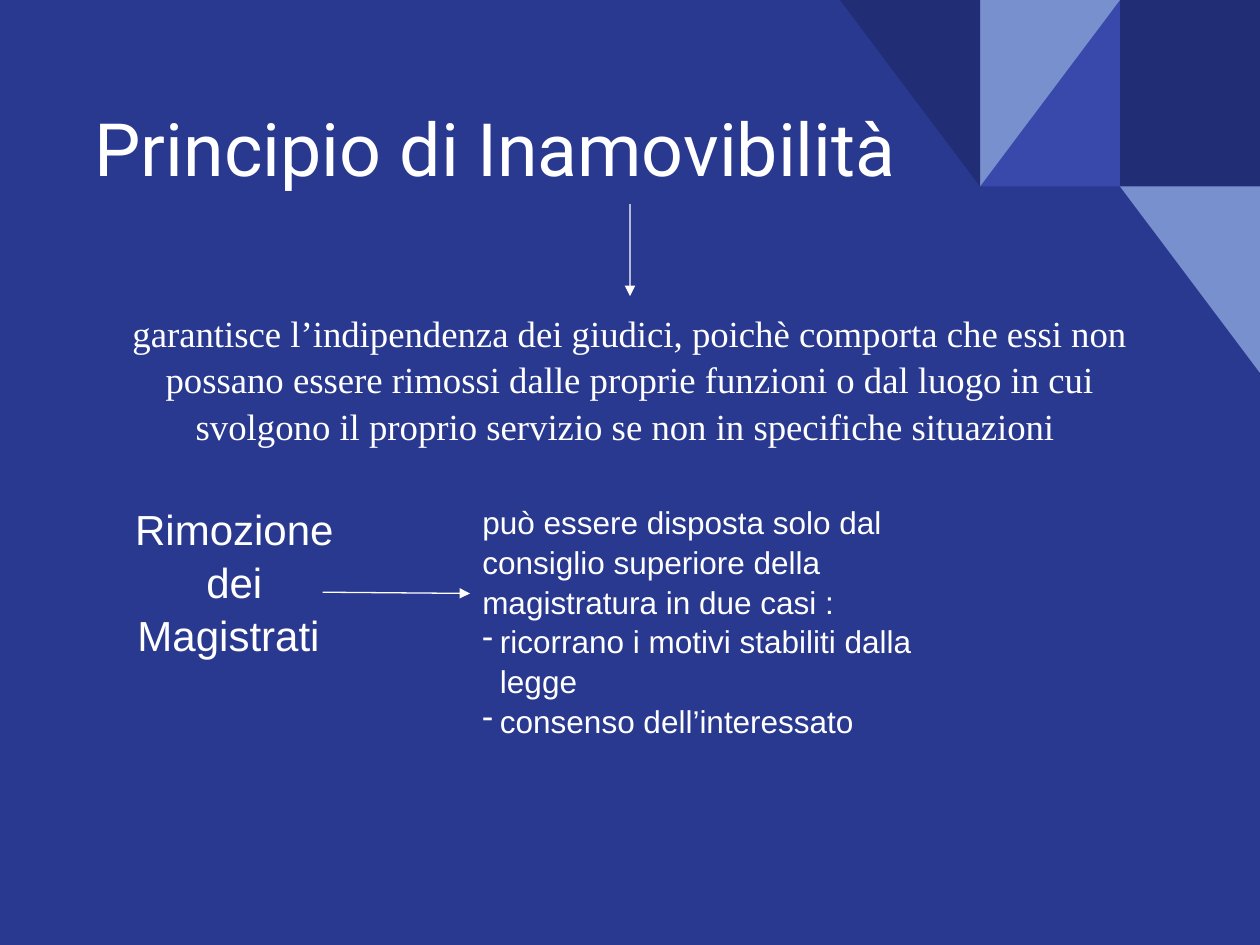
import pptx
import pptx.util
import pptx.dml.color
import pptx.enum.shapes
import pptx.enum.text
import pptx.oxml
import pptx.oxml.ns
from dataclasses import dataclass

Inches = pptx.util.Inches
Shape = pptx.enum.shapes.MSO_SHAPE
Align = pptx.enum.text.PP_ALIGN
Anchor = pptx.enum.text.MSO_ANCHOR

WIDTH, HEIGHT = 10, 7.5
COLUMN, ROW = WIDTH / 9, 1.48  # mosaic tile


@dataclass(frozen=True)
class Theme:
    background: str = "2A3990"
    dark: str = "212D74"
    medium: str = "3949AB"
    light: str = "7890CD"
    text: str = "FFFFFF"
    title: tuple = ("Roboto", 42)
    definition: tuple = ("Times New Roman", 21)
    subject: tuple = ("Arial", 24)
    detail: tuple = ("Arial", 18)
    line_spacing: float = 1.05
    line_width: float = 0.75
    inset: float = 0.1
    hanging: float = 0.14


THEME = Theme()


def rgb(value):
    return pptx.dml.color.RGBColor.from_string(value)


def add_xml(parent, markup):
    opening, rest = markup.split(">", 1) if not markup.endswith("/>") else (markup[:-2], None)
    namespace = pptx.oxml.ns.nsdecls("a")
    closing = "/>" if rest is None else ">" + rest
    parent.append(pptx.oxml.parse_xml(f"{opening} {namespace}{closing}"))


def add_tile(page, column, row, color, kind=Shape.RIGHT_TRIANGLE, turn=0, flip=False):
    tile = page.shapes.add_shape(kind, Inches(column * COLUMN), Inches(row * ROW),
                                 Inches(COLUMN), Inches(ROW))
    tile.shadow.inherit = False
    tile.fill.solid()
    tile.fill.fore_color.rgb = rgb(color)
    tile.line.fill.background()
    tile.rotation = turn
    if flip:
        tile._element.spPr.xfrm.set("flipH", "1")


def make_dash_item(para):
    properties = para._p.get_or_add_pPr()
    indent = Inches(THEME.hanging)
    properties.set("marL", str(indent))
    properties.set("indent", str(-indent))
    add_xml(properties, '<a:buChar char="-"/>')


def write_text(box, paragraphs, style, align=Align.LEFT, anchor=Anchor.TOP,
               spacing=THEME.line_spacing, first_item=None):
    frame = box.text_frame
    frame.text = "\n".join(paragraphs)
    frame.word_wrap = True
    frame.auto_size = pptx.enum.text.MSO_AUTO_SIZE.NONE
    frame.vertical_anchor = anchor
    frame.margin_left = frame.margin_right = Inches(THEME.inset)
    frame.margin_top = frame.margin_bottom = Inches(THEME.inset)
    for index, para in enumerate(frame.paragraphs):
        if first_item is not None and index >= first_item:
            make_dash_item(para)
        para.alignment = align
        para.line_spacing = spacing
        para.space_before = pptx.util.Pt(0)
        for span in para.runs:
            span.font.name, size = style
            span.font.size = pptx.util.Pt(size)
            span.font.color.rgb = rgb(THEME.text)


def set_title(page, text, left, top, width, height):
    title = page.shapes.title
    title.left, title.top = Inches(left), Inches(top)
    title.width, title.height = Inches(width), Inches(height)
    write_text(title, [text], THEME.title, anchor=Anchor.BOTTOM, spacing=1.0)


def add_text(page, place, paragraphs, style, **options):
    box = page.shapes.add_textbox(*(Inches(length) for length in place))
    write_text(box, paragraphs, style, **options)
    return box


def add_arrow(page, start, end):
    arrow = page.shapes.add_connector(pptx.enum.shapes.MSO_CONNECTOR.STRAIGHT,
                                      *(Inches(length) for length in start + end))
    arrow.line.color.rgb = rgb(THEME.text)
    arrow.line.width = pptx.util.Pt(THEME.line_width)
    add_xml(arrow.line._get_or_add_ln(), '<a:tailEnd type="triangle"/>')
    add_xml(arrow._element.spPr, "<a:effectLst/>")
    return arrow


def add_mosaic(page):
    add_tile(page, 8, 0, THEME.dark, kind=Shape.RECTANGLE)
    add_tile(page, 7, 0, THEME.medium, flip=True)
    add_tile(page, 7, 0, THEME.light, turn=180, flip=True)
    add_tile(page, 6, 0, THEME.dark, turn=180)
    add_tile(page, 8, 1, THEME.light, turn=180)


def main():
    deck = pptx.Presentation()
    deck.slide_width, deck.slide_height = Inches(WIDTH), Inches(HEIGHT)
    page = deck.slides.add_slide(deck.slide_layouts[5])
    page.background.fill.solid()
    page.background.fill.fore_color.rgb = rgb(THEME.background)
    add_mosaic(page)

    # Principle and its definition
    margin, title_bottom, definition_top = 0.65, 1.62, 2.35
    set_title(page, "Principio di Inamovibilità", margin, 0.4, 8.99, title_bottom - 0.4)
    definition = add_text(
        page, (margin, definition_top, WIDTH - 2 * margin, 0.63),
        ["garantisce l’indipendenza dei giudici, poichè comporta che essi non possano "
         "essere rimossi dalle proprie funzioni o dal luogo in cui svolgono il proprio "
         "servizio se non in specifiche situazioni "],
        THEME.definition, align=Align.CENTER)
    down = add_arrow(page, (WIDTH / 2, title_bottom), (WIDTH / 2, definition_top))
    down.end_connect(definition, 0)

    # Removal of magistrates and its conditions
    removal_top, detail_left = 3.88, 3.73
    add_text(page, (0.86, removal_top, 2, 1.43), ["Rimozione dei Magistrati "],
             THEME.subject, align=Align.CENTER)
    add_arrow(page, (2.56, 4.7), (detail_left, 4.71))
    add_text(page, (detail_left, removal_top, 3.73, 2.46),
             ["può essere disposta solo dal consiglio superiore della magistratura in due casi :",
              "ricorrano i motivi stabiliti dalla legge",
              "consenso dell’interessato"],
             THEME.detail, first_item=1)

    deck.save("out.pptx")


if __name__ == "__main__":
    main()
